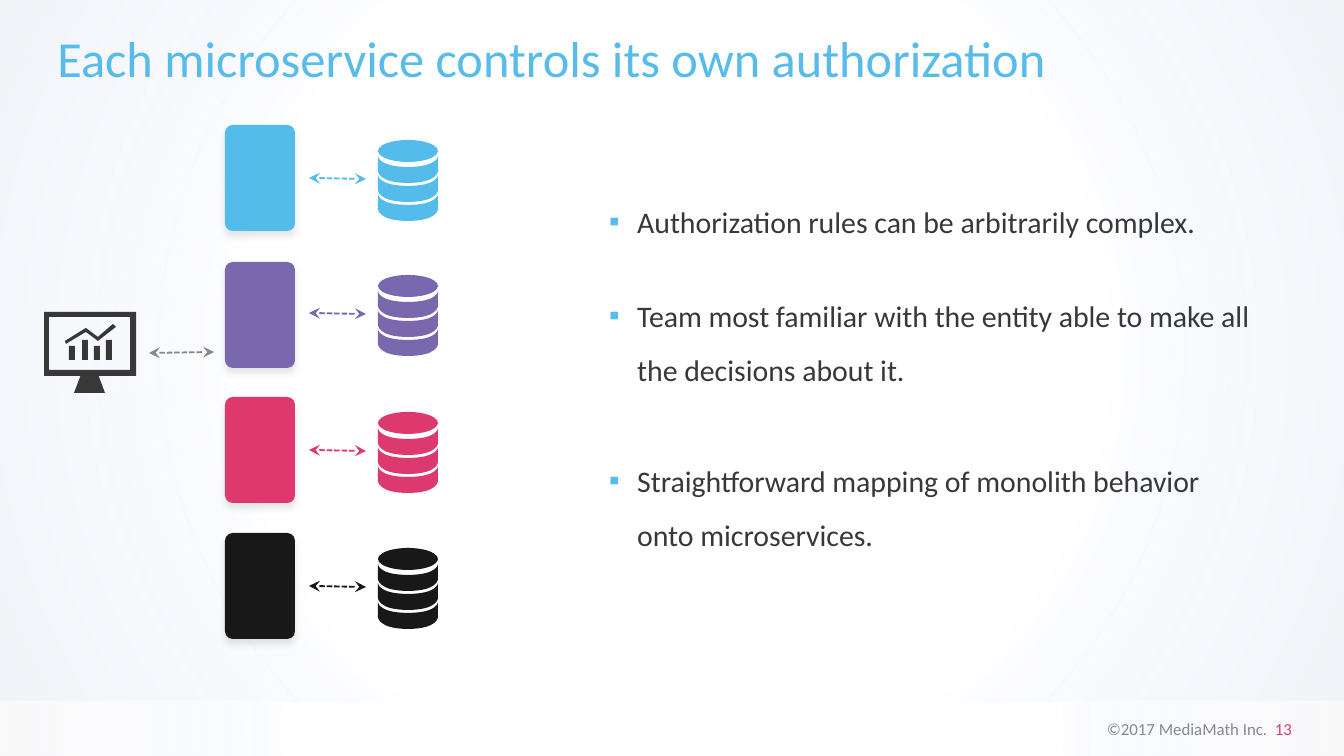
from pptx import Presentation
from pptx.dml.color import RGBColor
from pptx.enum.dml import MSO_LINE
from pptx.enum.shapes import MSO_CONNECTOR, MSO_SHAPE
from pptx.enum.text import MSO_ANCHOR, PP_ALIGN
from pptx.oxml import parse_xml
from pptx.oxml.ns import nsdecls, qn
from pptx.util import Pt

RECTANGLE, ROUNDED, OVAL = MSO_SHAPE.RECTANGLE, MSO_SHAPE.ROUNDED_RECTANGLE, MSO_SHAPE.OVAL
STRAIGHT, DASH = MSO_CONNECTOR.STRAIGHT, MSO_LINE.SQUARE_DOT
TOP, MIDDLE = MSO_ANCHOR.TOP, MSO_ANCHOR.MIDDLE
LEFT, RIGHT = PP_ALIGN.LEFT, PP_ALIGN.RIGHT

PX = 914400 / 134.4
THEME = {
    "font": "Calibri",
    "title": "58BCEB", "text": "383838", "muted": "888888", "accent": "DE396E",
    "services": ["54BCEB", "7A68AE", "DE396E", "181818"],
    "title size": 27, "body size": 16, "footer size": 9,
}


def px(*lengths):
    return [round(length * PX) for length in lengths]


def paint(shape, color):
    shape.shadow.inherit = False
    shape.line.fill.background()
    shape.fill.solid()
    shape.fill.fore_color.rgb = RGBColor.from_string(color)


deck = Presentation()
deck.slide_width, deck.slide_height = px(1344, 756)
page = deck.slides.add_slide(deck.slide_layouts[6])
shapes = page.shapes

# Backdrop and footer strip, white in the middle and tinted at the edges
backdrops = [
    ((-1, 703, 1346, 55), [(57, "FFFFFF", 100), (78, "F0F4FC", 29), (99, "F0EEF2", 30)]),
    ((-1, 0, 1346, 702), [(57, "FFFFFF", 100), (78, "F0F4FC", 50), (99, "E3EBF2", 50)]),
]
for place, stops in backdrops:
    backdrop = shapes.add_shape(RECTANGLE, *px(*place))
    paint(backdrop, "FFFFFF")
    stop_xml = "".join(
        f'<a:gs pos="{position * 1000}"><a:srgbClr val="{color}">'
        f'<a:alpha val="{alpha * 1000}"/></a:srgbClr></a:gs>'
        for position, color, alpha in stops)
    gradient = parse_xml(
        f'<a:gradFill {nsdecls("a")} rotWithShape="1"><a:gsLst>{stop_xml}</a:gsLst>'
        '<a:path path="circle"><a:fillToRect l="50000" t="50000" r="50000" b="50000"/>'
        '</a:path></a:gradFill>')
    properties = backdrop._element.spPr
    properties.replace(properties.find(qn("a:solidFill")), gradient)

# Title, bullet list and footer; each paragraph is (space before, spans)
texts = [
    {"place": (44, 27, 1254, 66), "size": THEME["title size"], "bullet": False,
     "frame": {"word_wrap": True, "vertical_anchor": MIDDLE},
     "para": {"alignment": LEFT, "line_spacing": Pt(30)},
     "paras": [(0, [("Each microservice controls its own authorization", THEME["title"])])]},
    {"place": (593, 179, 672, 417), "size": THEME["body size"], "bullet": True,
     "frame": {"word_wrap": True, "vertical_anchor": TOP},
     "para": {"alignment": LEFT, "line_spacing": 1.5},
     "paras": [
         (0, [("Authorization rules can be arbitrarily complex.", THEME["text"])]),
         (21.8, [("Team most familiar with the entity able to make all the decisions about it.",
                  THEME["text"])]),
         (30.7, [("Straightforward mapping of monolith behavior onto microservices.",
                  THEME["text"])])]},
    {"place": (992, 712, 313, 34), "size": THEME["footer size"], "bullet": False,
     "frame": {"word_wrap": True, "vertical_anchor": TOP},
     "para": {"alignment": RIGHT},
     "paras": [(0, [("©2017 MediaMath Inc.  ", THEME["muted"]), ("13", THEME["accent"])])]},
]
for text in texts:
    frame = shapes.add_textbox(*px(*text["place"])).text_frame
    for name, value in text["frame"].items():
        setattr(frame, name, value)
    for index, (space, spans) in enumerate(text["paras"]):
        para = frame.add_paragraph() if index else frame.paragraphs[0]
        if text["bullet"]:
            margin, indent = px(31, -28)
            paragraph_properties = para._p.get_or_add_pPr()
            paragraph_properties.set("marL", str(margin))
            paragraph_properties.set("indent", str(indent))
            for bullet in (f'buClr {nsdecls("a")}><a:srgbClr val="{THEME["title"]}"/></a:buClr>',
                           f'buFont {nsdecls("a")} typeface="{THEME["font"]}"/>',
                           f'buChar {nsdecls("a")} char="▪"/>'):
                paragraph_properties.append(parse_xml("<a:" + bullet))
        for name, value in {**text["para"], "space_before": Pt(space)}.items():
            setattr(para, name, value)
        for words, color in spans:
            span = para.add_run()
            span.text = words
            for name, value in {"name": THEME["font"], "size": Pt(text["size"])}.items():
                setattr(span.font, name, value)
            span.font.color.rgb = RGBColor.from_string(color)

# Client monitor: chart bars, then the outlines of trend line, stand and screen frame
for left, top in [(69, 346), (82, 340), (94, 346), (106, 340)]:
    paint(shapes.add_shape(RECTANGLE, *px(left, top, 6, 360 - top)), THEME["text"])
trend = [(86, 332), (98, 341), (116, 327), (113, 324), (98, 337), (86, 328), (65, 341), (66, 344)]
stand = [(93, 375), (98, 374), (105, 393), (74, 393), (82, 372), (86, 375)]
screen = [(49, 317), (130, 317), (130, 370), (49, 370)]
casing = [(136, 312), (44, 312), (44, 376), (136, 376)]
for contours in ([trend], [stand], [screen, casing]):
    first, *others = [[px(*point) for point in contour] for contour in contours]
    builder = shapes.build_freeform(*first[0], scale=1.0)
    builder.add_line_segments(first[1:], close=True)
    for contour in others:
        builder.move_to(*contour[0])
        builder.add_line_segments(contour[1:], close=True)
    paint(builder.convert_to_shape(), THEME["text"])

# Curved outline of a database disc, in a frame 60 wide and 27 high
disc_curves = [
    ("moveTo", [(0, 15)]), ("lnTo", [(0, 0)]),
    ("cubicBezTo", [(0, 0), (0, 11), (30, 11)]), ("cubicBezTo", [(60, 11), (60, 0), (60, 0)]),
    ("lnTo", [(60, 15)]),
    ("cubicBezTo", [(60, 15), (60, 27), (30, 27)]), ("cubicBezTo", [(0, 27), (0, 15), (0, 15)]),
]
disc_xml = f'<a:path {nsdecls("a")} w="60" h="27">' + "".join(
    f"<a:{step}>" + "".join(f'<a:pt x="{x}" y="{y}"/>' for x, y in points) + f"</a:{step}>"
    for step, points in disc_curves) + "<a:close/></a:path>"

# One row per service: card, arrow and database
arrows = [(THEME["muted"], (149, 353, 214, 352))]
rows = zip(THEME["services"], (125, 262, 397, 533), (140, 275, 412, 548))
for color, card_top, database_top in rows:
    paint(shapes.add_shape(OVAL, *px(378, database_top, 60, 22)), color)
    for disc in range(3):
        disc_top = database_top + 16 + 19 * disc
        corners = [px(x, disc_top + y) for x, y in [(378, 0), (438, 0), (438, 27), (378, 27)]]
        builder = shapes.build_freeform(*corners[0], scale=1.0)
        builder.add_line_segments(corners[1:], close=True)
        band = builder.convert_to_shape()
        outline_list = band._element.spPr.find(qn("a:custGeom")).find(qn("a:pathLst"))
        outline_list.replace(outline_list[0], parse_xml(disc_xml))
        paint(band, color)
    card = shapes.add_shape(ROUNDED, *px(225, card_top, 70, 106))
    card.adjustments[0] = 0.11
    paint(card, color)
    card._element.spPr.find(qn("a:effectLst")).append(parse_xml(
        f'<a:outerShdw {nsdecls("a")} blurRad="{Pt(4)}" dist="{Pt(3)}" dir="5400000" '
        'algn="t" rotWithShape="0"><a:srgbClr val="000000"><a:alpha val="10000"/>'
        '</a:srgbClr></a:outerShdw>'))
    arrows.append((color, (309, database_top + 38, 366, database_top + 39)))

# Dashed two-way arrows
for color, ends in arrows:
    arrow = shapes.add_connector(STRAIGHT, *px(*ends))
    for name, value in {"width": Pt(1), "dash_style": DASH}.items():
        setattr(arrow.line, name, value)
    arrow.line.color.rgb = RGBColor.from_string(color)
    properties = arrow._element.spPr
    for end in ("headEnd", "tailEnd"):
        properties.find(qn("a:ln")).append(
            parse_xml(f'<a:{end} {nsdecls("a")} type="stealth"/>'))
    properties.append(parse_xml(f'<a:effectLst {nsdecls("a")}/>'))

deck.save("out.pptx")
